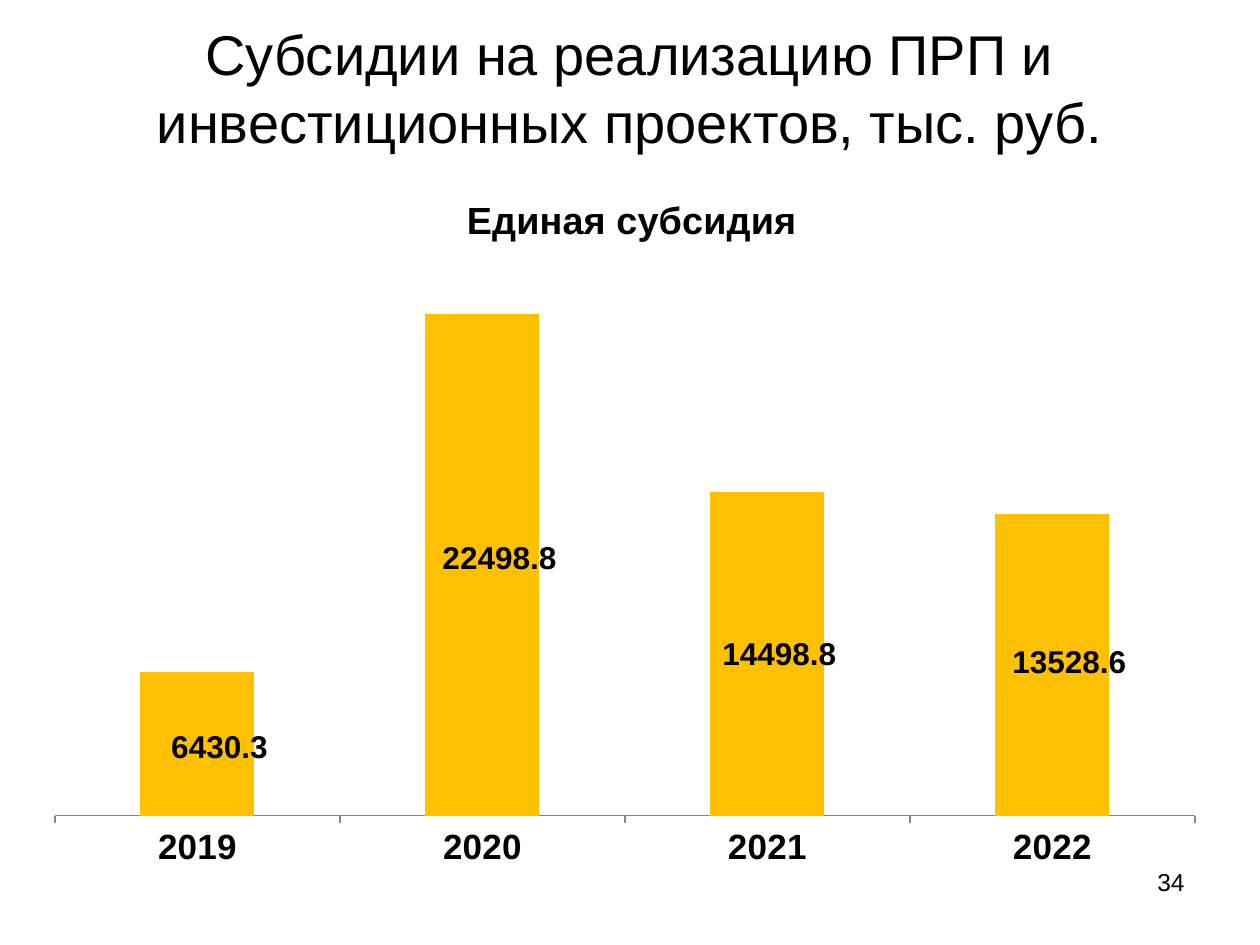
from dataclasses import dataclass

from lxml import etree
from pptx import Presentation
from pptx import util as u
from pptx.chart.data import CategoryChartData
from pptx.dml.color import RGBColor
from pptx.enum import chart as ch, text
from pptx.oxml.ns import qn

EMU_PER_PX = 914400 / 126


@dataclass(frozen=True)
class Theme:
    font: str = "Arial"
    ink: str = "000000"
    bar: str = "FFC000"
    axis: str = "868686"
    title: float = 32
    chart_title: float = 21.6
    category: float = 20
    value: float = 18
    number: float = 14


@dataclass(frozen=True)
class Box:
    left: int
    top: int
    width: int
    height: int

    def emu(self) -> list[int]:
        return [px(side) for side in (self.left, self.top, self.width, self.height)]


@dataclass(frozen=True)
class Subsidy:
    year: str
    amount: float
    shift_x: int
    shift_y: int


THEME = Theme()
TITLE = Box(63, 38, 1134, 98)
CHART = Box(32, 158, 1187, 724)
PLOT = Box(55, 258, 1140, 558)
NUMBER = Box(903, 861, 294, 66)
CHART_TITLE_LEFT, CHART_TITLE_TOP = 460, 189
SERIES = "Единая субсидия"
SUBSIDIES = [
    Subsidy("2019", 6430.3, 22, 3),
    Subsidy("2020", 22498.8, 17, -6),
    Subsidy("2021", 14498.8, 12, 0),
    Subsidy("2022", 13528.6, 17, -3),
]


def px(length: int) -> int:
    return round(length * EMU_PER_PX)


def style(font, size: float, bold: bool = False) -> None:
    font.name, font.size, font.bold = THEME.font, u.Pt(size), bold
    font.color.rgb = RGBColor.from_string(THEME.ink)


def write(shape, words: str, size: float, align: text.PP_ALIGN) -> None:
    frame = shape.text_frame
    frame.text = words
    frame.word_wrap = True
    frame.auto_size = text.MSO_AUTO_SIZE.NONE
    para = frame.paragraphs[0]
    para.alignment = align
    for span in para.runs:
        style(span.font, size)


def make_layout(**settings) -> etree._Element:
    """Return a manual chart layout; lengths are fractions of the chart."""
    layout = etree.Element(qn("c:layout"))
    manual = etree.SubElement(layout, qn("c:manualLayout"))
    for name, value in settings.items():
        number = value if isinstance(value, str) else f"{value:.4f}"
        etree.SubElement(manual, qn(f"c:{name}")).set("val", number)
    return layout


def position_parts(chart) -> None:
    """Fix the plot and the chart title, and nudge each value label."""
    root = chart.element
    for old in root.xpath("//c:plotArea/c:layout | //c:title/c:layout"):
        old.getparent().remove(old)
    plot = make_layout(
        layoutTarget="inner", xMode="edge", yMode="edge",
        x=(PLOT.left - CHART.left) / CHART.width,
        y=(PLOT.top - CHART.top) / CHART.height,
        w=PLOT.width / CHART.width, h=PLOT.height / CHART.height)
    root.xpath("//c:plotArea")[0].insert(0, plot)
    heading = make_layout(
        xMode="edge", yMode="edge",
        x=(CHART_TITLE_LEFT - CHART.left) / CHART.width,
        y=(CHART_TITLE_TOP - CHART.top) / CHART.height)
    root.xpath("//c:title/c:tx")[0].addnext(heading)
    for index, subsidy in zip(root.xpath("//c:dLbl/c:idx"), SUBSIDIES):
        index.addnext(make_layout(x=subsidy.shift_x / CHART.width,
                                  y=subsidy.shift_y / CHART.height))


def add_subsidy_chart(page) -> None:
    data = CategoryChartData()
    data.categories = [subsidy.year for subsidy in SUBSIDIES]
    data.add_series(SERIES, [subsidy.amount for subsidy in SUBSIDIES])
    chart = page.shapes.add_chart(
        ch.XL_CHART_TYPE.COLUMN_STACKED, *CHART.emu(), data).chart
    style(chart.font, THEME.value)
    chart.has_legend = False
    chart.has_title = True
    chart.chart_title.text_frame.text = SERIES
    style(chart.chart_title.text_frame.paragraphs[0].runs[0].font,
          THEME.chart_title, bold=True)

    years, amounts = chart.category_axis, chart.value_axis
    style(years.tick_labels.font, THEME.category, bold=True)
    years.major_tick_mark = ch.XL_TICK_MARK.OUTSIDE
    years.format.line.color.rgb = RGBColor.from_string(THEME.axis)
    amounts.visible = False
    amounts.has_major_gridlines = False
    amounts.minimum_scale, amounts.maximum_scale = 0, 25000

    plot = chart.plots[0]
    plot.gap_width, plot.overlap, plot.vary_by_categories = 150, 100, False
    series = plot.series[0]
    series.format.fill.solid()
    series.format.fill.fore_color.rgb = RGBColor.from_string(THEME.bar)
    series.data_labels.show_value = True
    style(series.data_labels.font, THEME.value, bold=True)
    for index in range(len(SUBSIDIES)):
        style(series.points[index].data_label.font, THEME.value, bold=True)
    position_parts(chart)


def main() -> None:
    deck = Presentation()
    deck.slide_width, deck.slide_height = px(1260), px(945)
    page = deck.slides.add_slide(deck.slide_layouts[5])
    title = page.shapes.title
    title.left, title.top, title.width, title.height = TITLE.emu()
    write(title, "Субсидии на реализацию ПРП и инвестиционных проектов, тыс. руб.",
          THEME.title, text.PP_ALIGN.CENTER)
    title.text_frame.vertical_anchor = text.MSO_ANCHOR.MIDDLE
    add_subsidy_chart(page)
    write(page.shapes.add_textbox(*NUMBER.emu()), "34", THEME.number,
          text.PP_ALIGN.RIGHT)
    deck.save("out.pptx")


if __name__ == "__main__":
    main()
